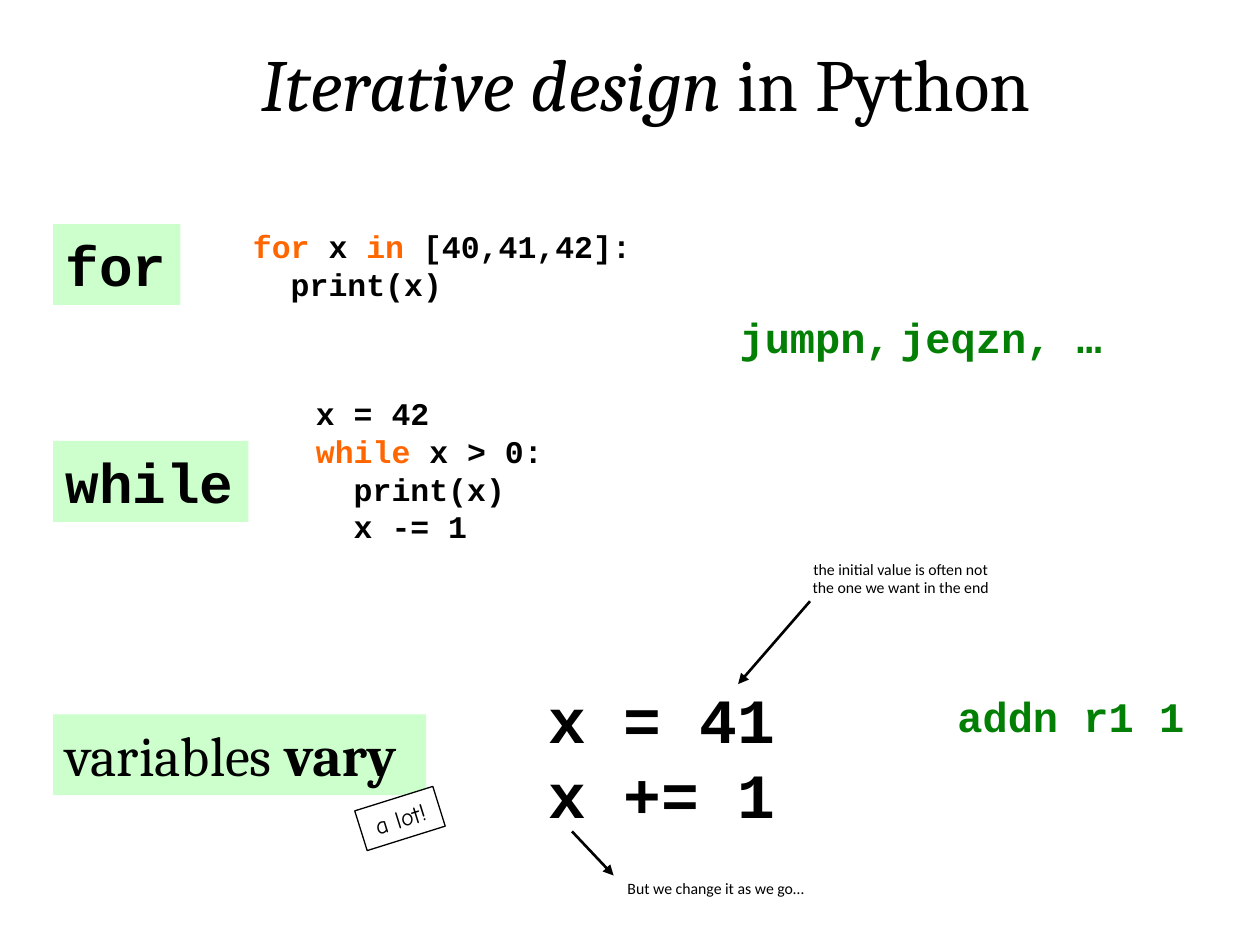
from lxml import etree
from pptx import Presentation
from pptx.dml.color import RGBColor
from pptx.enum.shapes import MSO_CONNECTOR, MSO_SHAPE
from pptx.enum.text import MSO_ANCHOR, PP_ALIGN
from pptx.oxml.ns import qn
from pptx.util import Cm, Pt

RECT = MSO_SHAPE.RECTANGLE
LINE = MSO_CONNECTOR.STRAIGHT
TOP, MID = MSO_ANCHOR.TOP, MSO_ANCHOR.MIDDLE
LEFT, MIDST = PP_ALIGN.LEFT, PP_ALIGN.CENTER

THEME = {
    "ink": RGBColor(0x00, 0x00, 0x00),
    "key": RGBColor(0xFF, 0x66, 0x00),
    "asm": RGBColor(0x02, 0x7F, 0x04),
    "mint": RGBColor(0xCC, 0xFF, 0xCC),
    "white": RGBColor(0xFF, 0xFF, 0xFF),
    "code": "Courier New",
    "serif": "Cambria",
    "sans": "Calibri",
    "hand": "Comic Neue",
    "title": Pt(42),
    "sum": Pt(36),
    "label": Pt(32),
    "op": Pt(24),
    "list": Pt(18),
    "tag": Pt(14),
    "note": Pt(9),
}


def write(shape, lines, face, size, wrap=False, align=LEFT, anchor=TOP):
    frame = shape.text_frame
    frame.word_wrap = wrap
    frame.vertical_anchor = anchor
    for i, line in enumerate(lines):
        para = frame.add_paragraph() if i else frame.paragraphs[0]
        para.alignment = align
        for text, look in line:
            run = para.add_run()
            run.text = text
            font = run.font
            font.name = THEME[look.get("face", face)]
            font.size = THEME[size]
            font.color.rgb = THEME[look.get("tint", "ink")]
            font.bold = look.get("bold", False)
            font.italic = look.get("slant", False)


def place(shape, box):
    shape.left, shape.top, shape.width, shape.height = map(Cm, box)


deck = Presentation()
deck.slide_width, deck.slide_height = Cm(25.4), Cm(19.05)
slide = deck.slides.add_slide(deck.slide_layouts[5])
shapes = slide.shapes

PLAIN = {}
BOLD = {"bold": True}
KEY = {"bold": True, "tint": "key"}
ASM = {"bold": True, "tint": "asm"}
THIN = {"bold": True, "tint": "asm", "face": "sans"}

title = shapes.title
place(title, (3.18, 0.64, 19.69, 2.06))
write(title, [[("Iterative design", {"slant": True}), (" in Python", PLAIN)]],
      "serif", "title", True, MIDST, TOP)

labels = [
    (4.52, 2.57, "code", False, [("for", BOLD)]),
    (8.89, 3.94, "code", False, [("while", BOLD)]),
    (14.4, 7.52, "serif", True, [("variables ", PLAIN), ("vary", BOLD)]),
]
for top, width, face, wrap, line in labels:
    label = shapes.add_shape(RECT, Cm(1.07), Cm(top), Cm(width), Cm(1.63))
    label.shadow.inherit = False
    label.fill.solid()
    label.fill.fore_color.rgb = THEME["mint"]
    label.line.fill.background()
    write(label, [line], face, "label", wrap)

tag = shapes.add_shape(RECT, Cm(7.24), Cm(16.08), Cm(1.65), Cm(0.84))
tag.rotation = 342.6
tag.shadow.inherit = False
tag.fill.solid()
tag.fill.fore_color.rgb = THEME["white"]
tag.line.color.rgb = THEME["ink"]
tag.line.width = Pt(0.75)
write(tag, [[("a lot!", PLAIN)]], "hand", "tag", False, MIDST)

texts = [
    ((4.85, 4.45, 8.2, 1.8), "code", "list", False, LEFT, TOP,
     [[("for", KEY), (" x ", BOLD), ("in", KEY), (" [40,41,42]:", BOLD)],
      [("  print(x)", BOLD)]]),
    ((6.12, 7.82, 5.08, 3.33), "code", "list", False, LEFT, TOP,
     [[("x = 42", BOLD)],
      [("while", KEY), (" x > 0:", BOLD)],
      [("  print(x)", BOLD)],
      [("  x -= 1", BOLD)]]),
    ((10.8, 13.59, 5.13, 3.33), "code", "sum", False, LEFT, TOP,
     [[("x = 41", BOLD)], [("x += 1", BOLD)]]),
    ((19.05, 13.79, 5.13, 1.27), "code", "op", False, LEFT, MID,
     [[("addn r1 1", ASM)]]),
    ((14.66, 6.15, 8.41, 1.27), "code", "op", True, LEFT, MID,
     [[("jumpn,", ASM), (" ", THIN), ("jeqzn, …", ASM)]]),
    ((16.1, 11.15, 4.11, 1.02), "sans", "note", True, MIDST, TOP,
     [[("the initial value is often not the one we want in the end", PLAIN)]]),
    ((12.4, 17.58, 5.28, 0.64), "sans", "note", True, LEFT, TOP,
     [[("But we change it as we go…", PLAIN)]]),
]
for box, face, size, wrap, align, anchor, lines in texts:
    text = shapes.add_textbox(*map(Cm, box))
    write(text, lines, face, size, wrap, align, anchor)

for ends in [(16.33, 12.12, 14.88, 13.79), (11.53, 16.76, 12.37, 17.65)]:
    arrow = shapes.add_connector(LINE, *map(Cm, ends))
    arrow.line.color.rgb = THEME["ink"]
    arrow.line.width = Pt(1.5)
    props = arrow._element.spPr
    etree.SubElement(props.find(qn("a:ln")), qn("a:tailEnd"), type="triangle")
    etree.SubElement(props, qn("a:effectLst"))

deck.save("out.pptx")
